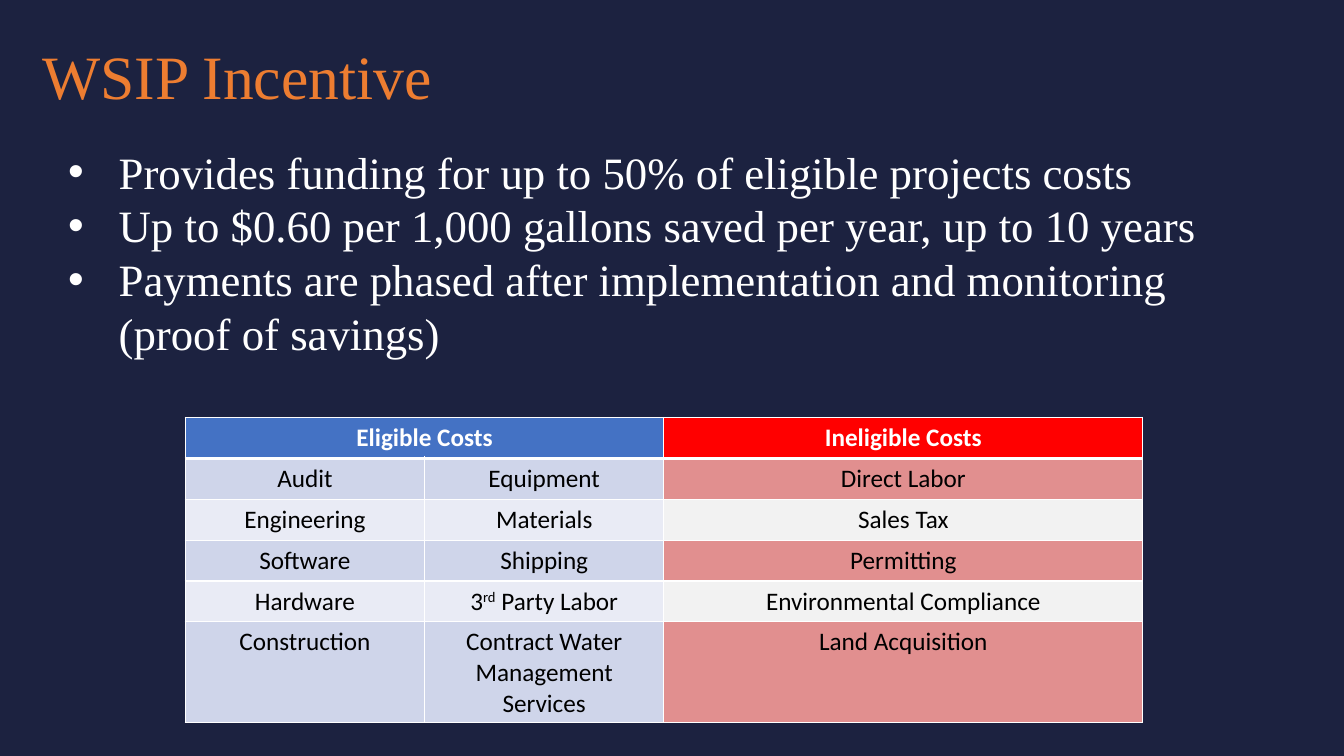
"""Build the WSIP Incentive slide with its table of eligible and ineligible costs."""
from lxml.etree import SubElement
from pptx import Presentation
from pptx.dml.color import RGBColor as Color
from pptx.enum.text import MSO_ANCHOR as Anchor, PP_ALIGN as Align
from pptx.oxml import parse_xml
from pptx.oxml.ns import nsdecls, qn
from pptx.util import Cm, Pt

TITLE = "WSIP Incentive"
POINTS = [
    "Provides funding for up to 50% of eligible projects costs",
    "Up to $0.60 per 1,000 gallons saved per year, up to 10 years",
    "Payments are phased after implementation and monitoring (proof of savings)",
]
HEADERS = ["Eligible Costs", "", "Ineligible Costs"]
COSTS = [
    ("Audit", "Equipment", "Direct Labor"),
    ("Engineering", "Materials", "Sales Tax"),
    ("Software", "Shipping", "Permitting"),
    ("Hardware", ("3", "rd", " Party Labor"), "Environmental Compliance"),
    ("Construction", "Contract Water Management Services", "Land Acquisition"),
]
THEME = {
    "background": "1C2240",
    "border": "FFFFFF",
    "header_fills": ("4472C4", "4472C4", "FF0000"),
    "band_fills": (("CFD5EA", "CFD5EA", "E18F8F"), ("E9EBF5", "E9EBF5", "F2F2F2")),
    "title": {"name": "Times New Roman", "size": Pt(44), "color": "ED7D31"},
    "point": {"name": "Times New Roman", "size": Pt(32), "color": "FFFFFF"},
    "header": {"name": "Calibri", "size": Pt(18), "bold": True, "color": "FFFFFF"},
    "cost": {"name": "Calibri", "size": Pt(18), "bold": False, "color": "000000"},
}
TITLE_BOX = Cm(1.07), Cm(0.84), Cm(27.74), Cm(2.34)
POINTS_BOX = Cm(1.47), Cm(3.51), Cm(30.56), Cm(7.09)
TABLE_LEFT, TABLE_TOP = Cm(4.67), Cm(10.52)
COLUMN_WIDTHS = [Cm(6.03), Cm(6.03), Cm(12.07)]
ROW_HEIGHT = Cm(1.03)
INDENT = Cm(1.27)


def add_span(para, text, style):
    span = para.add_run()
    span.text = text
    for name, value in style.items():
        if name == "color":
            span.font.color.rgb = Color.from_string(value)
        else:
            setattr(span.font, name, value)
    return span


def add_box(page, place):
    box = page.shapes.add_textbox(*place)
    box.text_frame.word_wrap = True
    return box.text_frame


def add_bullet(para):
    props = para._p.get_or_add_pPr()
    props.set("marL", str(INDENT))
    props.set("indent", str(-INDENT))
    SubElement(props, qn("a:buFont")).set("typeface", "Arial")
    SubElement(props, qn("a:buChar")).set("char", "•")


def add_borders(cell, widths):
    props = cell._tc.get_or_add_tcPr()
    for index, (side, width) in enumerate(widths.items()):
        props.insert(index, parse_xml(
            f'<a:ln{side} {nsdecls("a")} w="{Pt(width)}"><a:solidFill>'
            f'<a:srgbClr val="{THEME["border"]}"/></a:solidFill></a:ln{side}>'))


def fill_cell(cell, content, style, fill, widths):
    cell.fill.solid()
    cell.fill.fore_color.rgb = Color.from_string(fill)
    add_borders(cell, widths)
    para = cell.text_frame.paragraphs[0]
    para.alignment = Align.CENTER
    parts = (content,) if isinstance(content, str) else content
    for index, text in enumerate(parts):
        if text:
            span = add_span(para, text, style)
            if index == 1:
                span._r.get_or_add_rPr().set("baseline", "30000")


def add_title(page):
    frame = add_box(page, TITLE_BOX)
    frame.vertical_anchor = Anchor.MIDDLE
    for side in ("left", "top", "right", "bottom"):
        setattr(frame, f"margin_{side}", 0)
    para = frame.paragraphs[0]
    para.line_spacing = 0.9
    add_span(para, TITLE, THEME["title"])


def add_points(page):
    frame = add_box(page, POINTS_BOX)
    for index, text in enumerate(POINTS):
        para = frame.add_paragraph() if index else frame.paragraphs[0]
        add_bullet(para)
        add_span(para, text, THEME["point"])


def add_costs(page):
    rows = [HEADERS, *COSTS]
    table = page.shapes.add_table(
        len(rows), len(HEADERS), TABLE_LEFT, TABLE_TOP,
        sum(COLUMN_WIDTHS), ROW_HEIGHT * len(rows)).table
    for column, width in zip(table.columns, COLUMN_WIDTHS):
        column.width = width
    for number, contents in enumerate(rows):
        table.rows[number].height = ROW_HEIGHT
        style = THEME["cost" if number else "header"]
        fills = THEME["band_fills"][(number - 1) % 2] if number else THEME["header_fills"]
        widths = {"L": 1, "R": 1, "T": 3 if number == 1 else 1, "B": 1 if number else 3}
        for column, content in enumerate(contents):
            fill_cell(table.cell(number, column), content, style, fills[column], widths)
    table.cell(0, 0).merge(table.cell(0, 1))


def main():
    deck = Presentation()
    deck.slide_width, deck.slide_height = Cm(33.87), Cm(19.05)
    page = deck.slides.add_slide(deck.slide_layouts[6])
    page.background.fill.solid()
    page.background.fill.fore_color.rgb = Color.from_string(THEME["background"])
    add_title(page)
    add_points(page)
    add_costs(page)
    deck.save("out.pptx")


if __name__ == "__main__":
    main()
